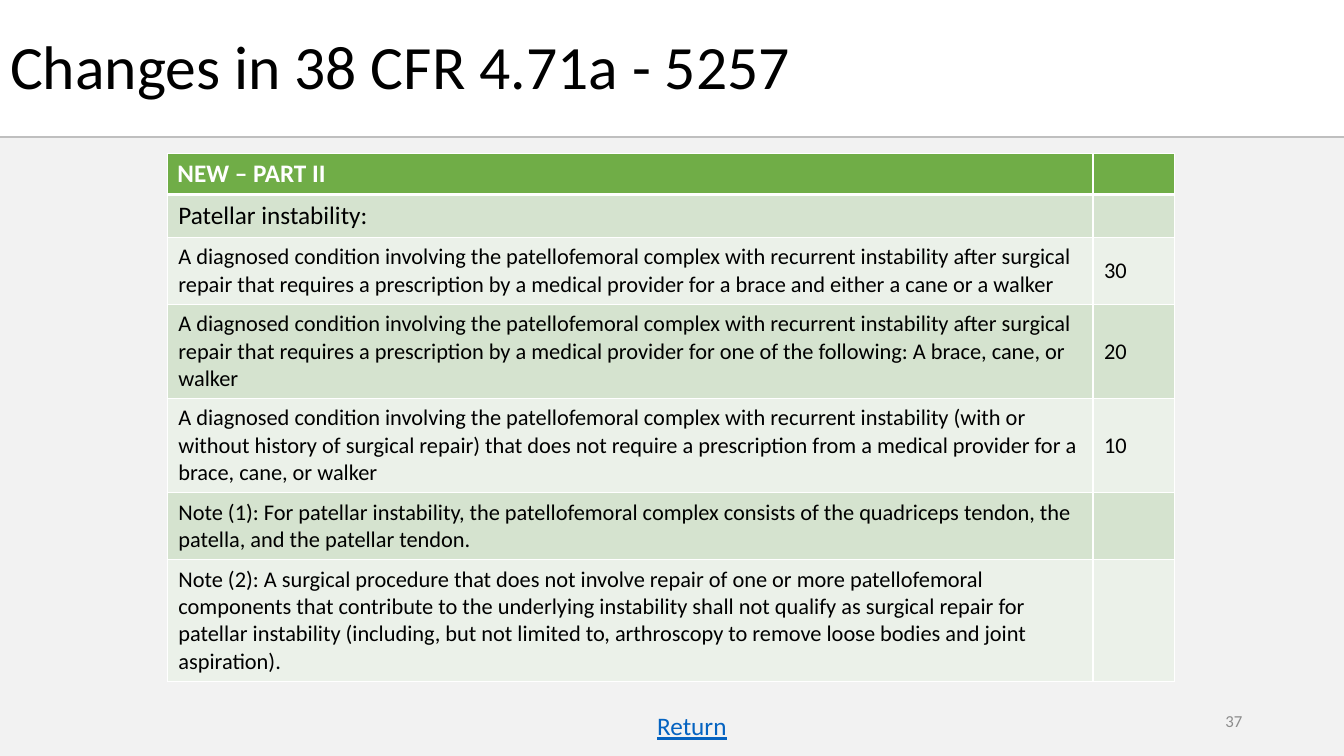
import pptx
import pptx.util
import pptx.dml.color
import pptx.enum.shapes
import pptx.enum.text
from lxml import etree

Inches, Pt = pptx.util.Inches, pptx.util.Pt
ALIGN, ANCHOR = pptx.enum.text.PP_ALIGN, pptx.enum.text.MSO_ANCHOR
NS = "http://schemas.openxmlformats.org/drawingml/2006/main"
FONT = "Calibri"
COLORS = {
    "black": "000000", "white": "FFFFFF", "panel": "F2F2F2", "rule": "BFBFBF",
    "head": "70AD47", "dark": "D5E3CF", "light": "EBF1E9",
    "number": "8C8C8C", "link": "0563C1",
}

TITLE = "Changes in 38 CFR 4.71a - 5257"
ROWS = [
    ("NEW – PART II", ""),
    ("Patellar instability:", ""),
    ("A diagnosed condition involving the patellofemoral complex with recurrent "
     "instability after surgical repair that requires a prescription by a medical "
     "provider for a brace and either a cane or a walker", "30"),
    ("A diagnosed condition involving the patellofemoral complex with recurrent "
     "instability after surgical repair that requires a prescription by a medical "
     "provider for one of the following: A brace, cane, or walker", "20"),
    ("A diagnosed condition involving the patellofemoral complex with recurrent "
     "instability (with or without history of surgical repair) that does not require "
     "a prescription from a medical provider for a brace, cane, or walker", "10"),
    ("Note (1): For patellar instability, the patellofemoral complex consists of the "
     "quadriceps tendon, the patella, and the patellar tendon.", ""),
    ("Note (2): A surgical procedure that does not involve repair of one or more "
     "patellofemoral components that contribute to the underlying instability shall "
     "not qualify as surgical repair for patellar instability (including, but not "
     "limited to, arthroscopy to remove loose bodies and joint aspiration).", ""),
]
WIDTHS = (9.18, 0.81)
ROW_H = 0.41


def rgb(name):
    return pptx.dml.color.RGBColor.from_string(COLORS[name])


def write(frame, text, size, color, bold=False, align=ALIGN.LEFT):
    para = frame.paragraphs[0]
    para.alignment = align
    run = para.add_run()
    run.text = text
    run.font.name, run.font.size, run.font.bold = FONT, Pt(size), bold
    run.font.color.rgb = rgb(color)
    return run


def edge(cell, bottom):
    """Draw white cell borders, with the bottom one of the given width."""
    props = cell._tc.get_or_add_tcPr()
    sides = {"lnL": 1, "lnR": 1, "lnT": 1, "lnB": bottom}
    for spot, (tag, width) in enumerate(sides.items()):
        line = etree.Element(f"{{{NS}}}{tag}", w=str(Pt(width)))
        fill = etree.SubElement(line, f"{{{NS}}}solidFill")
        etree.SubElement(fill, f"{{{NS}}}srgbClr", val=COLORS["white"])
        props.insert(spot, line)


def add_box(slide, place, text, size, color, align=ALIGN.LEFT):
    box = slide.shapes.add_textbox(*map(Inches, place))
    box.text_frame.word_wrap = True
    return box.text_frame, write(box.text_frame, text, size, color, align=align)


def add_back(slide):
    width = Inches(13.33)
    panel = slide.shapes.add_shape(pptx.enum.shapes.MSO_SHAPE.RECTANGLE,
                                   0, Inches(1.37), width, Inches(6.13))
    panel.shadow.inherit = False
    panel.fill.solid()
    panel.fill.fore_color.rgb = rgb("panel")
    panel.line.fill.background()
    rule = slide.shapes.add_connector(pptx.enum.shapes.MSO_CONNECTOR.STRAIGHT,
                                      0, Inches(1.36), width, Inches(1.36))
    rule.line.color.rgb = rgb("rule")
    rule.line.width = Pt(1.5)
    etree.SubElement(rule._element.spPr, f"{{{NS}}}effectLst")


def add_title(slide):
    title = slide.shapes.title
    title.left, title.top, title.width, title.height = map(Inches, (0, 0.15, 8.83, 1.07))
    frame = title.text_frame
    frame.word_wrap = True
    frame.vertical_anchor = ANCHOR.MIDDLE
    write(frame, TITLE, 44, "black")
    frame.paragraphs[0].line_spacing = 0.9


def add_grid(slide):
    grid = slide.shapes.add_table(len(ROWS), len(WIDTHS), Inches(1.66), Inches(1.52),
                                  Inches(sum(WIDTHS)), Inches(ROW_H * len(ROWS))).table
    for col, width in zip(grid.columns, WIDTHS):
        col.width = Inches(width)
    for i, texts in enumerate(ROWS):
        grid.rows[i].height = Inches(ROW_H)
        head = i == 0
        for j, text in enumerate(texts):
            cell = grid.cell(i, j)
            cell.fill.solid()
            cell.fill.fore_color.rgb = rgb("head" if head else "dark" if i % 2 else "light")
            edge(cell, 3 if head else 1)
            if not text:
                continue
            if not head:
                cell.vertical_anchor = ANCHOR.MIDDLE
                cell.margin_left = cell.margin_right = Inches(0.11)
                cell.margin_top = cell.margin_bottom = Inches(0.06)
            write(cell.text_frame, text, 18 if i < 2 else 16,
                  "white" if head else "black", head)


def main():
    deck = pptx.Presentation()
    deck.slide_width, deck.slide_height = Inches(13.33), Inches(7.5)
    slide = deck.slides.add_slide(deck.slide_layouts[5])
    add_back(slide)
    add_title(slide)
    add_grid(slide)
    frame, _ = add_box(slide, (9.42, 6.95, 3, 0.4), "37", 12, "number", ALIGN.RIGHT)
    frame.vertical_anchor = ANCHOR.MIDDLE
    frame, run = add_box(slide, (6.42, 7, 1, 0.4), "Return", 18, "link")
    frame.auto_size = pptx.enum.text.MSO_AUTO_SIZE.SHAPE_TO_FIT_TEXT
    run.font.underline = True
    deck.save("out.pptx")


if __name__ == "__main__":
    main()
